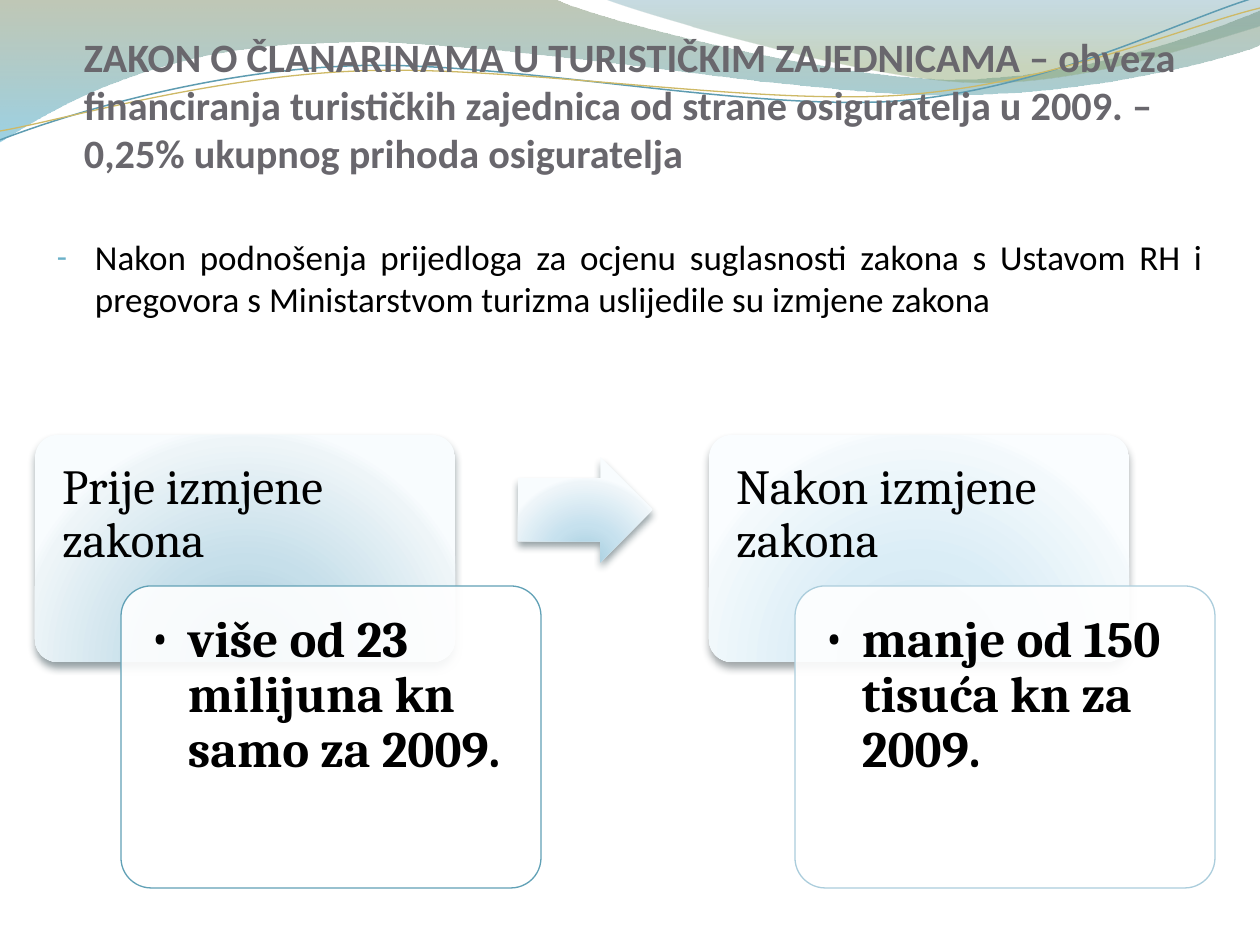
import math
from dataclasses import dataclass

import pptx
import pptx.dml.color
import pptx.enum.shapes
import pptx.enum.text
import pptx.oxml
import pptx.oxml.ns
import pptx.util

EMU_PER_PX = 914400 / 126
COLORS = {
    "title": "69676D", "text": "000000", "dash": "6BB1C9", "white": "FFFFFF",
    "blue_line": "5E9CB1", "gold_line": "CEB966",
    "before_line": "61A1B6", "after_line": "ABCDDC",
    "before_shadow": "213941", "arrow_shadow": "233C44", "after_shadow": "3C484D",
    "olive": "74855E", "sky": "4AACCE", "teal": "45889F", "green": "8AA36D",
}
GLOWS = {
    "before": ["A1C6D6", "C6DFEA", "EEF5F8", "F8FCFE"],
    "arrow": ["A2CBDC", "C6E1EE", "EEF5F9", "F8FCFE"],
    "after": ["C5DFEB", "DAEDF6", "F3F9FC", "FAFDFF"],
}
GLOW_STOPS = [0, 43, 93, 100]
LINEAR = '<a:lin ang="5400000" scaled="0"/>'
RADIAL = ('<a:path path="circle"><a:fillToRect l="50000" t="130000" '
          'r="50000" b="-30000"/></a:path>')


@dataclass
class Wave:
    """Each segment has one end point, or two controls and an end point."""
    start: tuple
    segments: list
    stops: list | None = None  # (percent, color, opacity)
    line: str | None = None
    weight: float = 0
    tilt: float = 0  # degrees clockwise
    pivot: tuple = (0, 0)


@dataclass
class Stage:
    key: str
    left: int
    heading: str
    detail: str


WAVES = [
    Wave((0, 0), [
        [(554, -1)],
        [(600, 21), (837, 79), (955, 79)],
        [(1075, 79), (1207, 33), (1260, 11)],
        [(1261, 45)],
        [(1239, 55), (1096, 96), (940, 95)],
        [(784, 94), (481, 35), (324, 43)],
        [(163, 45), (58, 105), (-1, 142)],
    ], stops=[(0, "olive", 45), (100, "sky", 55)]),
    Wave((604, -1), [
        [(641, 14), (859, 78), (969, 82)],
        [(1079, 87), (1211, 40), (1260, 26)],
        [(1260, 0)],
    ], stops=[(0, "teal", 30), (80, "green", 45)]),
    Wave((0, 140), [
        [(60, 117), (199, 72), (349, 66)],
        [(498, 59), (747, 112), (898, 101)],
        [(1049, 89), (1182, 19), (1257, -3)],
    ], line="blue_line", weight=0.85, tilt=-2.7, pivot=(629, 72)),
    Wave((0, 131), [
        [(59, 121), (207, 77), (357, 71)],
        [(508, 64), (752, 106), (903, 95)],
        [(1053, 84), (1185, 26), (1260, 8)],
    ], line="gold_line", weight=0.75, tilt=-2.7, pivot=(629, 74)),
]
STAGES = [
    Stage("before", 35, "Prije izmjene zakona", "više od 23 milijuna kn samo za 2009."),
    Stage("after", 709, "Nakon izmjene zakona", "manje od 150 tisuća kn za 2009."),
]


def px(length: float) -> pptx.util.Emu:
    return pptx.util.Emu(round(length * EMU_PER_PX))


def rgb(name: str) -> pptx.dml.color.RGBColor:
    return pptx.dml.color.RGBColor.from_string(COLORS[name])


def xml(tag: str, attributes: str, content: str = ""):
    return pptx.oxml.parse_xml(
        f'<a:{tag} {pptx.oxml.ns.nsdecls("a")} {attributes}>{content}</a:{tag}>')


def fill_gradient(shape, stops: list, direction: str) -> None:
    """Fill with (percent, hex, opacity) stops."""
    marks = ""
    for at, color, opacity in stops:
        alpha = f'<a:alpha val="{opacity * 1000}"/>' if opacity < 100 else ""
        marks += f'<a:gs pos="{at * 1000}"><a:srgbClr val="{color}">{alpha}</a:srgbClr></a:gs>'
    shape.fill.background()
    empty = shape.element.spPr.find(pptx.oxml.ns.qn("a:noFill"))
    shape.element.spPr.replace(
        empty, xml("gradFill", 'rotWithShape="1"', f"<a:gsLst>{marks}</a:gsLst>{direction}"))


def untilt(wave: Wave, point: tuple) -> tuple:
    angle = math.radians(-wave.tilt)
    x, y = point[0] - wave.pivot[0], point[1] - wave.pivot[1]
    return (px(wave.pivot[0] + x * math.cos(angle) - y * math.sin(angle)),
            px(wave.pivot[1] + x * math.sin(angle) + y * math.cos(angle)))


def draw_wave(slide, wave: Wave) -> None:
    segments = [[untilt(wave, point) for point in segment] for segment in wave.segments]
    builder = slide.shapes.build_freeform(*untilt(wave, wave.start))
    builder.add_line_segments([segment[-1] for segment in segments],
                              close=wave.stops is not None)
    shape = builder.convert_to_shape()
    # Bend the straight segments into Bézier curves
    straights = list(shape.element.spPr.iter(pptx.oxml.ns.qn("a:lnTo")))
    for straight, segment in zip(straights, segments):
        if len(segment) == 3:
            knots = "".join(f'<a:pt x="{x - shape.left}" y="{y - shape.top}"/>'
                            for x, y in segment)
            straight.getparent().replace(straight, xml("cubicBezTo", "", knots))
    shape.rotation = wave.tilt
    shape.shadow.inherit = False
    if wave.stops:
        fill_gradient(shape, [(at, COLORS[c], a) for at, c, a in wave.stops], LINEAR)
        shape.line.fill.background()
    else:
        shape.fill.background()
        shape.line.color.rgb = rgb(wave.line)
        shape.line.width = pptx.util.Pt(wave.weight)


def add_preset(slide, kind, box: tuple, adjustments: list):
    shape = slide.shapes.add_shape(kind, *map(px, box))
    shape.shadow.inherit = False
    for index, value in enumerate(adjustments):
        shape.adjustments[index] = value
    return shape


def add_glow(shape, key: str) -> None:
    """Radial fill and a soft shadow below."""
    fill_gradient(shape, [(at, c, 100) for at, c in zip(GLOW_STOPS, GLOWS[key])], RADIAL)
    shape.line.fill.background()
    effects = shape.element.spPr.find(pptx.oxml.ns.qn("a:effectLst"))
    effects.append(xml(
        "outerShdw", 'blurRad="57150" dist="38100" dir="5400000" rotWithShape="0"',
        f'<a:srgbClr val="{COLORS[key + "_shadow"]}"><a:alpha val="48000"/></a:srgbClr>'))


def write(slide, box: tuple, text: str, font: str, size: int, color: str = "text",
          bold: bool = False, margins: tuple = (0, 0, 0, 0), spacing: float | None = None):
    frame = slide.shapes.add_textbox(*map(px, box)).text_frame
    frame.text = text
    frame.word_wrap = True
    (frame.margin_left, frame.margin_top,
     frame.margin_right, frame.margin_bottom) = map(px, margins)
    paragraph = frame.paragraphs[0]
    paragraph.line_spacing = spacing
    style = paragraph.runs[0].font
    style.name, style.size, style.bold = font, pptx.util.Pt(size), bold
    style.color.rgb = rgb(color)
    return paragraph


def add_bullet(paragraph, mark: str, indent: int, color: str, font: str, percent: int) -> None:
    properties = paragraph._p.get_or_add_pPr()
    properties.set("marL", str(px(indent)))
    properties.set("indent", str(-px(indent)))
    properties.append(xml("buClr", "", f'<a:srgbClr val="{COLORS[color]}"/>'))
    properties.append(xml("buSzPct", f'val="{percent * 1000}"'))
    properties.append(xml("buFont", f'typeface="{font}"'))
    properties.append(xml("buChar", f'char="{mark}"'))


def draw_stage(slide, stage: Stage) -> None:
    rounded = pptx.enum.shapes.MSO_SHAPE.ROUNDED_RECTANGLE
    card = add_preset(slide, rounded, (stage.left, 435, 420, 227), [0.1])
    add_glow(card, stage.key)
    write(slide, (stage.left, 435, 420, 151), stage.heading, "Cambria", 28,
          margins=(27, 27, 27, 15), spacing=0.9)

    panel_box = (stage.left + 86, 586, 420, 302)
    panel = add_preset(slide, rounded, panel_box, [0.1])
    panel.fill.solid()
    panel.fill.fore_color.rgb = rgb("white")
    panel.element.spPr.find(".//" + pptx.oxml.ns.qn("a:srgbClr")).append(
        xml("alpha", 'val="90000"'))
    panel.line.color.rgb = rgb(stage.key + "_line")
    panel.line.width = pptx.util.Pt(0.75)
    detail = write(slide, panel_box, stage.detail, "Cambria", 29, bold=True,
                   margins=(28, 28, 28, 28), spacing=0.9)
    add_bullet(detail, "•", 39, "text", "Cambria", 100)


def main() -> None:
    deck = pptx.Presentation()
    deck.slide_width, deck.slide_height = px(1260), px(945)
    slide = deck.slides.add_slide(deck.slide_layouts[6])

    # Decorative waves along the top
    for wave in WAVES:
        draw_wave(slide, wave)

    # Introduction and title
    reason = write(slide, (44, 185, 1172, 679),
                   "Nakon podnošenja prijedloga za ocjenu suglasnosti zakona s Ustavom RH i "
                   "pregovora s Ministarstvom turizma uslijedile su izmjene zakona",
                   "Calibri", 20, margins=(13, 51, 13, 6))
    reason.alignment = pptx.enum.text.PP_ALIGN.JUSTIFY
    add_bullet(reason, "-", 38, "dash", "Calibri", 95)
    write(slide, (84, 32, 1134, 203),
          "ZAKON O ČLANARINAMA U TURISTIČKIM ZAJEDNICAMA – obveza financiranja "
          "turističkih zajednica od strane osiguratelja u 2009. – 0,25% ukupnog prihoda "
          "osiguratelja", "Calibri", 23, "title", bold=True)

    # Before and after the change of law
    for stage in STAGES:
        draw_stage(slide, stage)
    arrow = add_preset(slide, pptx.enum.shapes.MSO_SHAPE.RIGHT_ARROW,
                       (518, 457, 135, 105), [0.6, 0.5])
    add_glow(arrow, "arrow")

    deck.save("out.pptx")


if __name__ == "__main__":
    main()
